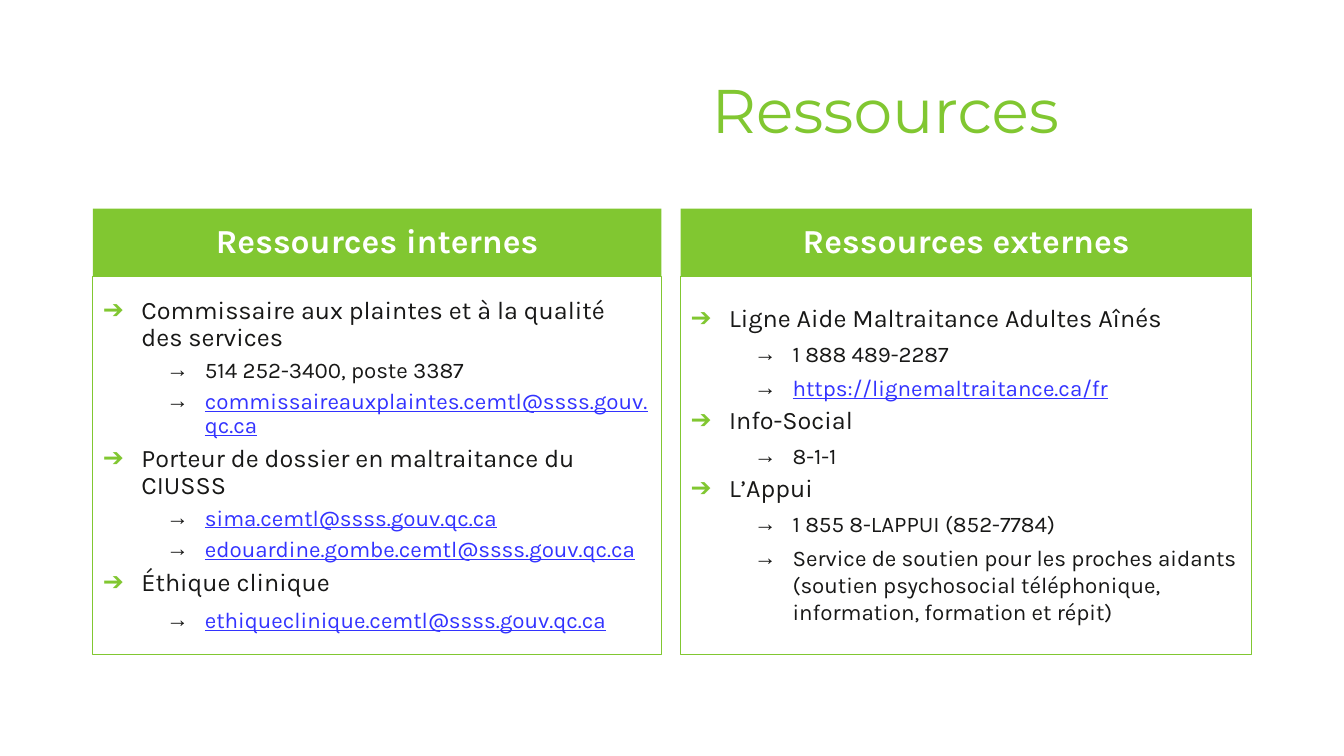
from lxml import etree
from pptx import Presentation
from pptx.dml.color import RGBColor as RGB
from pptx.enum.text import MSO_ANCHOR as ANCHOR, MSO_AUTO_SIZE as AUTO, PP_ALIGN as ALIGN
from pptx.oxml.ns import qn
from pptx.util import Cm, Pt

COLORS = {"green": "81C731", "ink": "181817", "link": "3333FF", "white": "FFFFFF"}

# Lists: (level, text, line spacing)
INTERNAL = [
    (1, "Commissaire aux plaintes et à la qualité des services", 0.9),
    (2, "514 252-3400, poste 3387", 0.9),
    (2, "commissaireauxplaintes.cemtl@ssss.gouv.qc.ca", 0.9),
    (1, "Porteur de dossier en maltraitance du CIUSSS", 0.9),
    (2, "sima.cemtl@ssss.gouv.qc.ca", 0.9),
    (2, "edouardine.gombe.cemtl@ssss.gouv.qc.ca", 0.9),
    (1, "Éthique clinique", 0.9),
    (2, "ethiqueclinique.cemtl@ssss.gouv.qc.ca", 1.1),
]
EXTERNAL = [
    (1, "Ligne Aide Maltraitance Adultes Aînés", 0.9),
    (2, "1 888 489-2287", 1.0),
    (2, "https://lignemaltraitance.ca/fr", 1.0),
    (1, "Info-Social", 0.9),
    (2, "8-1-1", 1.0),
    (1, "L’Appui", 0.9),
    (2, "1 855 8-LAPPUI (852-7784)", 1.0),
    (2, "Service de soutien pour les proches aidants (soutien psychosocial "
        "téléphonique, information, formation et répit)", 1.0),
]
# Per level: bullet, bullet colour, left indent in cm, text size
LEVELS = {1: ("➔", "green", 0.97, 18), 2: ("→", "ink", 2.57, 16)}
HANGING = 0.97


class Deck:
    """Holds the style and the current slide."""

    def __init__(self):
        self.prs = Presentation()
        self.prs.slide_width, self.prs.slide_height = Cm(33.87), Cm(19.05)
        self.slide = self.prs.slides.add_slide(self.prs.slide_layouts[4])

    def color(self, name):
        return RGB.from_string(COLORS[name])

    def place(self, idx, x, y, w, h):
        sp = self.slide.placeholders[idx]
        sp.left, sp.top, sp.width, sp.height = Cm(x), Cm(y), Cm(w), Cm(h)
        tf = sp.text_frame
        tf.word_wrap, tf.auto_size = True, AUTO.NONE
        tf.vertical_anchor = ANCHOR.MIDDLE
        return sp

    def format(self, p, size, color, spacing=0.9, before=0, font="Karla", bold=False):
        p.line_spacing, p.space_before, p.space_after = spacing, Pt(before), Pt(0)
        for r in p.runs:
            r.font.name, r.font.size, r.font.bold = font, Pt(size), bold
            r.font.color.rgb = self.color(color)

    def title(self, text, *box):
        p = self.place(0, *box).text_frame.paragraphs[0]
        p.text, p.alignment = text, ALIGN.RIGHT
        self.format(p, 44, "green", font="Montserrat")

    def heading(self, idx, text, *box):
        sp = self.place(idx, *box)
        sp.fill.solid()
        sp.fill.fore_color.rgb = self.color("green")
        p = sp.text_frame.paragraphs[0]
        p.text, p.alignment = text, ALIGN.CENTER
        self.format(p, 24, "white", bold=True)

    def bullet(self, p, char, color, indent):
        pPr = p._p.get_or_add_pPr()
        pPr.set("marL", str(Cm(indent)))
        pPr.set("indent", str(-Cm(HANGING)))
        clr = etree.SubElement(pPr, qn("a:buClr"))
        etree.SubElement(clr, qn("a:srgbClr")).set("val", COLORS[color])
        etree.SubElement(pPr, qn("a:buChar")).set("char", char)

    def bullets(self, idx, items, *box):
        sp = self.place(idx, *box)
        sp.line.color.rgb, sp.line.width = self.color("green"), Pt(0.75)
        tf = sp.text_frame
        for i, (level, text, spacing) in enumerate(items):
            p = tf.add_paragraph() if i else tf.paragraphs[0]
            p.text, p.level = text, level
            char, color, indent, size = LEVELS[level]
            self.bullet(p, char, color, indent)
            is_link = "@" in text or text.startswith("https")
            self.format(p, size, "link" if is_link else "ink", spacing, 5 if i else 0)
            if is_link:
                p.runs[0].font.underline = True


def main():
    deck = Deck()
    deck.title("Ressources", 2.34, 1.02, 24.61, 3.68)

    # Two columns: a heading above a framed list
    columns = [
        (1, "Ressources internes", INTERNAL, 2.34, 14.33),
        (3, "Ressources externes", EXTERNAL, 17.15, 14.4),
    ]
    for idx, heading, items, x, w in columns:
        deck.heading(idx, heading, x, 5.26, w, 1.7)
        deck.bullets(idx + 1, items, x, 6.96, w, 9.53)

    # Layout footers are not copied to the slide, so every placeholder is filled
    deck.prs.save("out.pptx")


if __name__ == "__main__":
    main()
